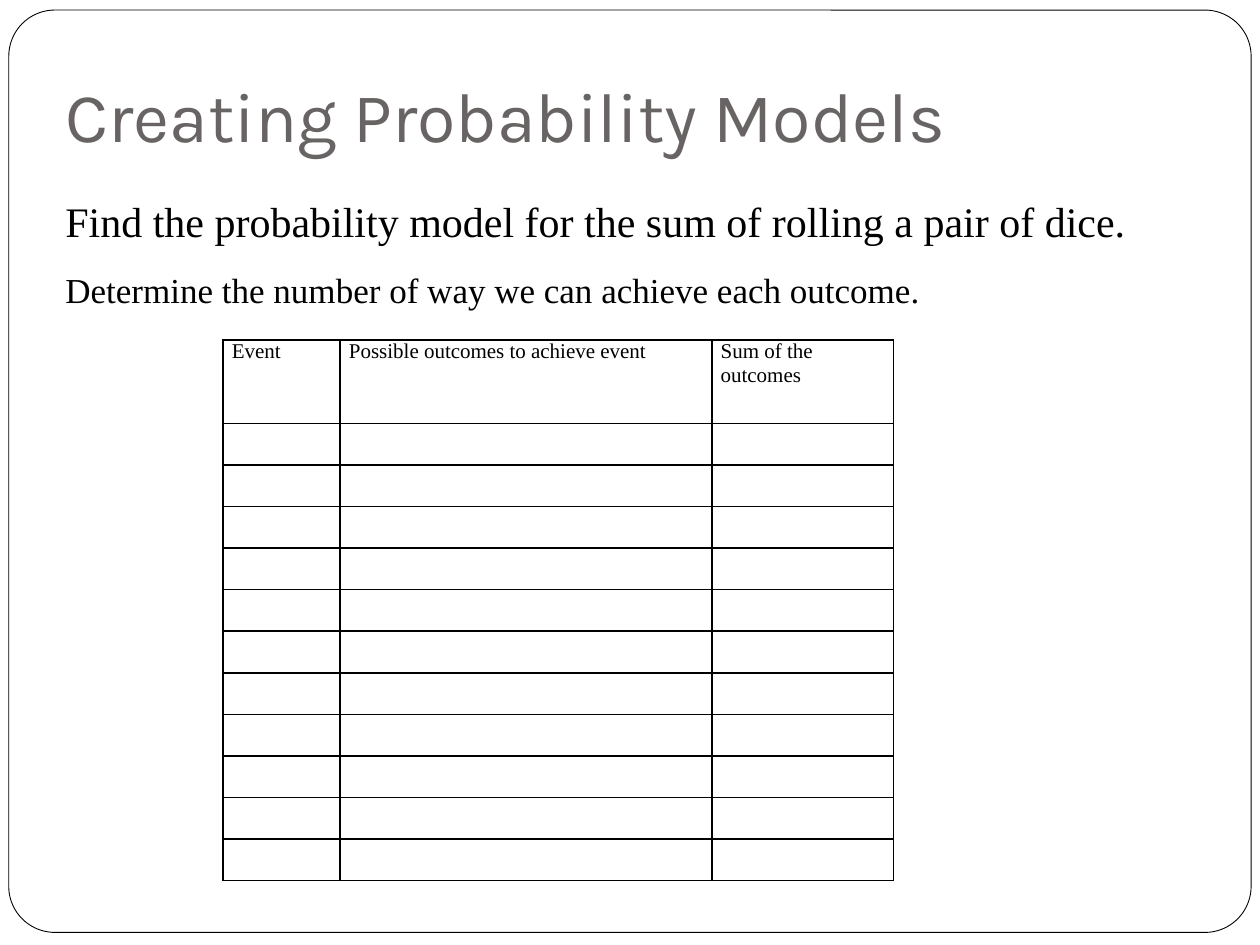
from lxml.etree import SubElement
from pptx import Presentation
from pptx.dml.color import RGBColor
from pptx.enum.shapes import MSO_SHAPE
from pptx.enum.text import MSO_ANCHOR, PP_ALIGN
from pptx.oxml.ns import qn
from pptx.util import Inches, Pt

BLACK = RGBColor(0x00, 0x00, 0x00)
WHITE = RGBColor(0xFF, 0xFF, 0xFF)
GREY = RGBColor(0x69, 0x64, 0x64)
TITLE_FONT = "Karla"
BODY_FONT = "Times New Roman"


def write(tf, text, size, font=BODY_FONT, color=BLACK):
    p = tf.paragraphs[0]
    p.alignment = PP_ALIGN.LEFT
    r = p.add_run()
    r.text = text
    r.font.size = Pt(size)
    r.font.name = font
    r.font.color.rgb = color


def set_borders(cell, color=BLACK, width=1):
    tc_pr = cell._tc.get_or_add_tcPr()
    for i, side in enumerate(("lnL", "lnR", "lnT", "lnB")):
        ln = SubElement(tc_pr, qn(f"a:{side}"), w=str(Pt(width)))
        fill = SubElement(ln, qn("a:solidFill"))
        SubElement(fill, qn("a:srgbClr"), val=str(color))
        # Borders have to come before the cell fill
        tc_pr.insert(i, ln)


class SlideBuilder:
    def __init__(self, prs):
        self.s = prs.slides.add_slide(prs.slide_layouts[5])

    def frame(self, left, top, width, height):
        """Draw the rounded page border behind everything else."""
        sp = self.s.shapes.add_shape(
            MSO_SHAPE.ROUNDED_RECTANGLE,
            Inches(left), Inches(top), Inches(width), Inches(height))
        sp.adjustments[0] = 0.05
        sp.shadow.inherit = False
        sp.fill.solid()
        sp.fill.fore_color.rgb = WHITE
        sp.line.color.rgb = BLACK
        sp.line.width = Pt(0.5)
        self.s.shapes.title._element.addprevious(sp._element)

    def title(self, text, left, top, width, height):
        sp = self.s.shapes.title
        sp.left, sp.top = Inches(left), Inches(top)
        sp.width, sp.height = Inches(width), Inches(height)
        tf = sp.text_frame
        tf.vertical_anchor = MSO_ANCHOR.BOTTOM
        tf.margin_bottom = Inches(0.1)
        write(tf, text, 40, TITLE_FONT, GREY)

    def text(self, text, left, top, width, height, size):
        sp = self.s.shapes.add_textbox(
            Inches(left), Inches(top), Inches(width), Inches(height))
        sp.text_frame.word_wrap = True
        write(sp.text_frame, text, size)

    def table(self, headers, left, top, col_widths, row_heights):
        table = self.s.shapes.add_table(
            len(row_heights), len(col_widths), Inches(left), Inches(top),
            Inches(sum(col_widths)), Inches(sum(row_heights))).table
        for col, width in zip(table.columns, col_widths):
            col.width = Inches(width)
        for row, height in zip(table.rows, row_heights):
            row.height = Inches(height)
        for cell in table.iter_cells():
            cell.margin_left = cell.margin_right = Inches(0.07)
            cell.margin_top = cell.margin_bottom = 0
            cell.fill.background()
            set_borders(cell)
        for cell, header in zip(table.rows[0].cells, headers):
            write(cell.text_frame, header, 12)


def main():
    prs = Presentation()
    prs.slide_width, prs.slide_height = Inches(10), Inches(7.5)

    slide = SlideBuilder(prs)
    slide.frame(0.07, 0.08, 9.86, 7.32)
    slide.title("Creating Probability Models", 0.42, 0.37, 8.5, 0.97)
    slide.text("Find the probability model for the sum of rolling a pair of dice.",
               0.42, 1.5, 8.83, 0.5, size=24)
    slide.text("Determine the number of way we can achieve each outcome.",
               0.42, 2.08, 7.75, 0.44, size=20)
    slide.table(["Event", "Possible outcomes to achieve event", "Sum of the outcomes"],
                1.77, 2.7, col_widths=[0.93, 2.95, 1.44],
                row_heights=[0.66] + [0.33] * 11)

    prs.save("out.pptx")


if __name__ == "__main__":
    main()
